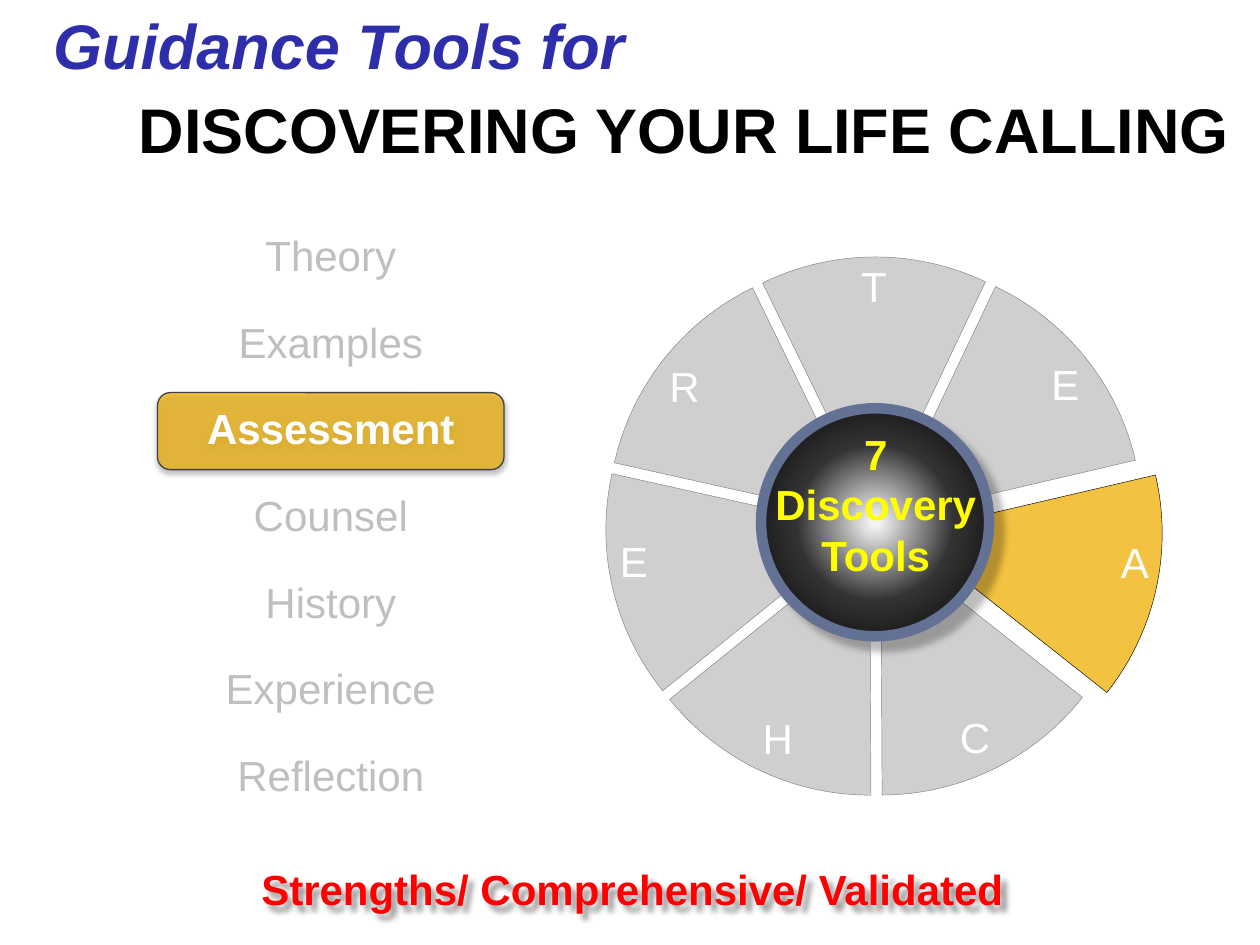
from lxml.etree import SubElement
from pptx import Presentation
from pptx.chart.data import CategoryChartData
from pptx.dml.color import RGBColor
from pptx.enum.chart import XL_CHART_TYPE, XL_LABEL_POSITION
from pptx.enum.shapes import MSO_SHAPE
from pptx.enum.text import MSO_ANCHOR, PP_ALIGN
from pptx.oxml import parse_xml
from pptx.oxml.ns import nsdecls, qn
from pptx.util import Pt

TITLE = "Guidance Tools for"
SUBTITLE = "DISCOVERING YOUR LIFE CALLING"
TOOLS = ["Theory", "Examples", "Assessment", "Counsel", "History", "Experience", "Reflection"]
CURRENT = TOOLS.index("Assessment")
HUB_LINES = ["7", "Discovery", "Tools"]
TAGLINE = "Strengths/ Comprehensive/ Validated"

THEME = {
    "font": "Arial", "heading": 36, "text": 24,
    "title": "2E2EAA", "black": "000000", "muted": "BFBFBF", "accent": "EFAE00",
    "white": "FFFFFF", "hub_text": "FFFF00", "hub_ring": "637194",
    "tagline": "FF0000", "outline": "404040", "edge": "808080",
}
HUB_GRADIENT = [(3, "F2F2F2"), (49, "323232"), (100, "000000")]
LIST_LEFT, LIST_TOP, LIST_PITCH = 90, 125.3, 49.55
ROW_WIDTH, ROW_HEIGHT = 198, 44
CHART_BOX = (192.2, 121, 594, 360)
PLOT = {"x": 0.259, "y": 0.068, "w": 0.519, "h": 0.864}


def color(name):
    return RGBColor.from_string(THEME[name])


def set_fill(fill, name, alpha=100):
    fill.solid()
    fill.fore_color.rgb = color(name)
    if alpha < 100:
        # the colour element is the last srgbClr just written by this fill
        node = fill._xPr.find(qn("a:solidFill")).find(qn("a:srgbClr"))
        SubElement(node, qn("a:alpha"), val=str(alpha * 1000))


def set_line(line, name, width):
    line.color.rgb = color(name)
    line.width = Pt(width)


def add_shadow(shape, alpha, blur, distance, angle):
    shape.shadow.inherit = False
    shape._element.spPr.find(qn("a:effectLst")).append(parse_xml(
        f'<a:outerShdw {nsdecls("a")} blurRad="{Pt(blur)}" dist="{Pt(distance)}" '
        f'dir="{angle * 60000}" algn="ctr" rotWithShape="0"><a:srgbClr val="000000">'
        f'<a:alpha val="{alpha * 1000}"/></a:srgbClr></a:outerShdw>'))


def write(shape, lines, size, name, bold=True, italic=False, anchor=MSO_ANCHOR.TOP,
          wrap=True, margins=(7.2, 3.6), spacing=1.0):
    frame = shape.text_frame
    frame.word_wrap = wrap
    frame.vertical_anchor = anchor
    frame.margin_left = frame.margin_right = Pt(margins[0])
    frame.margin_top = frame.margin_bottom = Pt(margins[1])
    frame.text = "\n".join(lines)
    for paragraph in frame.paragraphs:
        paragraph.alignment = PP_ALIGN.CENTER
        paragraph.line_spacing = spacing
        paragraph.space_before = Pt(0)
        font = paragraph.font
        font.name, font.size = THEME["font"], Pt(THEME[size])
        font.bold, font.italic = bold, italic
        font.color.rgb = color(name)


def points(*lengths):
    return [Pt(length) for length in lengths]


def add_wheel(slide):
    data = CategoryChartData()
    data.categories = [tool[0] for tool in TOOLS]
    data.add_series("Series 1", [14] * len(TOOLS))
    chart = slide.shapes.add_chart(XL_CHART_TYPE.PIE, *points(*CHART_BOX), data).chart
    chart.has_legend = chart.has_title = False
    chart.font.name, chart.font.size = THEME["font"], Pt(10)
    plot = chart.plots[0]
    plot.vary_by_categories = True
    SubElement(plot._element, qn("c:firstSliceAng"), val="334")

    layout = "".join(f'<c:{key} val="{value}"/>' for key, value in PLOT.items())
    area = chart._chartSpace.chart.plotArea
    for old in area.findall(qn("c:layout")):
        area.remove(old)
    area.insert(0, parse_xml(
        f'<c:layout {nsdecls("c")}><c:manualLayout><c:layoutTarget val="inner"/>'
        f'<c:xMode val="edge"/><c:yMode val="edge"/>{layout}</c:manualLayout></c:layout>'))

    series = plot.series[0]
    for index in range(len(TOOLS)):
        current = index == CURRENT
        wedge = series.points[index].format
        set_fill(wedge.fill, "accent" if current else "muted", 75)
        set_line(wedge.line, "black" if current else "edge", 0.25)
        properties = series._element.findall(qn("c:dPt"))[index].find(qn("c:spPr"))
        properties.addprevious(parse_xml(
            f'<c:explosion {nsdecls("c")} val="{12 if current else 5}"/>'))
    series._element.find(qn("c:dPt")).addprevious(
        parse_xml(f'<c:explosion {nsdecls("c")} val="5"/>'))

    labels = series.data_labels
    labels.show_category_name = True
    labels.show_value = labels.show_percentage = False
    labels.position = XL_LABEL_POSITION.INSIDE_END
    labels.font.name, labels.font.size = THEME["font"], Pt(THEME["text"])
    labels.font.bold = False
    labels.font.color.rgb = color("white")


def add_tool_list(slide):
    for index, tool in enumerate(TOOLS):
        box = points(LIST_LEFT, LIST_TOP + index * LIST_PITCH, ROW_WIDTH, ROW_HEIGHT)
        current = index == CURRENT
        if current:
            row = slide.shapes.add_shape(MSO_SHAPE.ROUNDED_RECTANGLE, *box)
            set_fill(row.fill, "accent", 70)
            set_line(row.line, "outline", 0.75)
            add_shadow(row, 35, 3.1, 1.8, 90)
        else:
            row = slide.shapes.add_textbox(*box)
        write(row, [tool], "text", "white" if current else "muted", bold=current,
              anchor=MSO_ANCHOR.MIDDLE, margins=(7.2, 7.2), spacing=0.9)


def add_hub(slide):
    hub = slide.shapes.add_shape(MSO_SHAPE.OVAL, *points(434.9, 233.3, 130.3, 130.3))
    set_fill(hub.fill, "black")
    stops = "".join(f'<a:gs pos="{position * 1000}"><a:srgbClr val="{value}"/></a:gs>'
                    for position, value in HUB_GRADIENT)
    properties = hub._element.spPr
    properties.replace(properties.find(qn("a:solidFill")), parse_xml(
        f'<a:gradFill {nsdecls("a")} rotWithShape="1"><a:gsLst>{stops}</a:gsLst>'
        '<a:path path="circle"><a:fillToRect l="50000" t="50000" r="50000" b="50000"/>'
        '</a:path></a:gradFill>'))
    set_line(hub.line, "hub_ring", 6)
    add_shadow(hub, 25, 4, 8, 45)
    caption = slide.shapes.add_textbox(*points(425.5, 241.2, 149.8, 94.3))
    write(caption, HUB_LINES, "text", "hub_text")


def main():
    presentation = Presentation()
    presentation.slide_width, presentation.slide_height = points(720, 540)
    slide = presentation.slides.add_slide(presentation.slide_layouts[5])

    title = slide.shapes.title
    title.left, title.top, title.width, title.height = points(21.6, 0, 344.2, 51)
    write(title, [TITLE], "heading", "title", italic=True, wrap=False)

    add_wheel(slide)
    add_tool_list(slide)
    add_hub(slide)

    subtitle = slide.shapes.add_textbox(*points(69.1, 48.2, 643.7, 51))
    write(subtitle, [SUBTITLE], "heading", "black", wrap=False)

    tagline = slide.shapes.add_textbox(*points(113, 486, 496.8, 28.8))
    write(tagline, [TAGLINE], "text", "tagline", margins=(7.2, 7.2))
    add_shadow(tagline, 40, 3, 4, 45)

    presentation.save("out.pptx")


if __name__ == "__main__":
    main()
